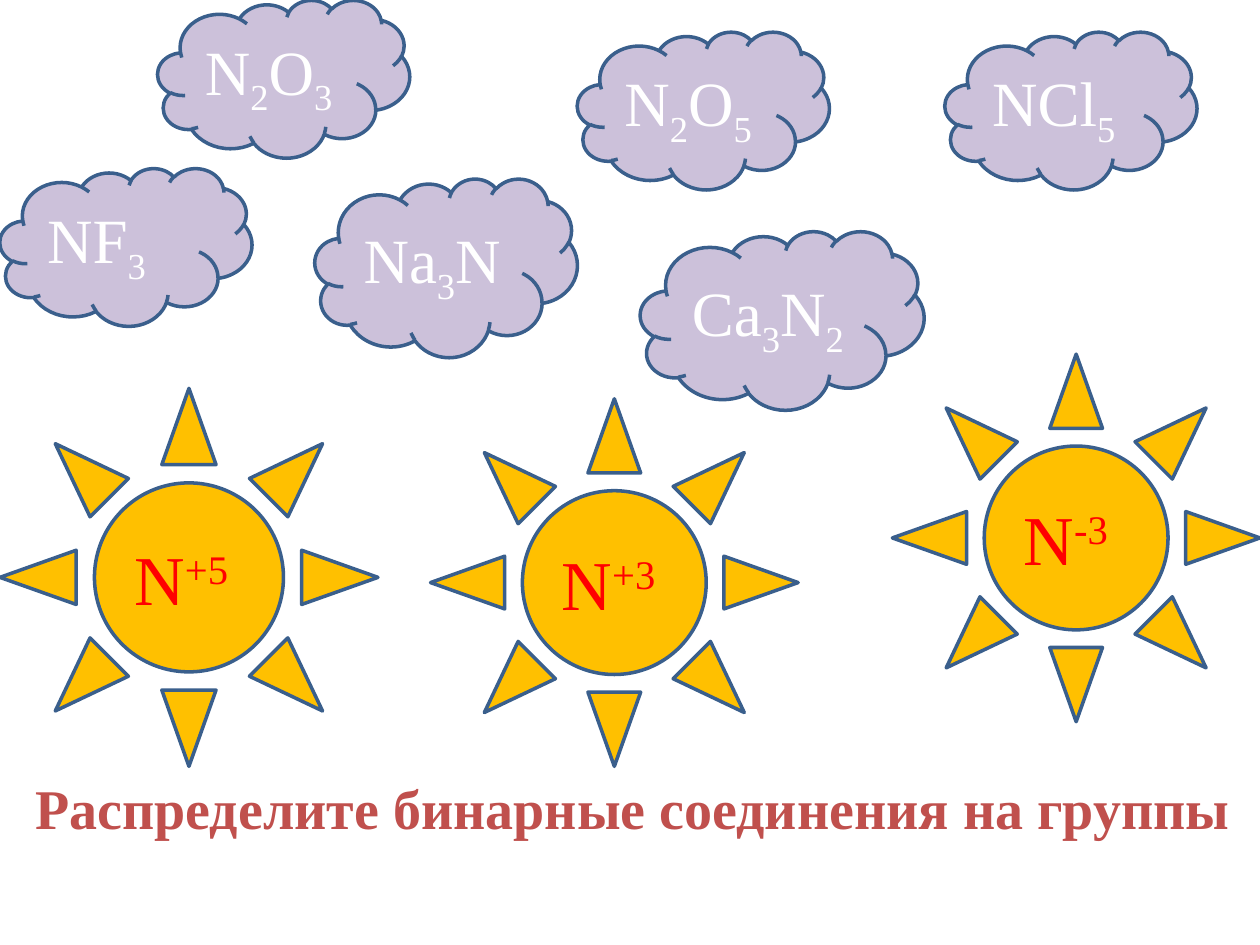
from pptx import Presentation
from pptx import util as u
from pptx.dml import color
from pptx.enum import shapes, text

FONT = "Times New Roman"
SUBSCRIPT, SUPERSCRIPT = -25000, 30000


def paint(target, hex_colour):
    target.rgb = color.RGBColor.from_string(hex_colour)


def add_formula(preset, box, parts, fill, ink, size, shift):
    """Draw a preset shape holding a formula; every second part is raised or lowered."""
    figure = slide.shapes.add_shape(preset, *[u.Cm(length) for length in box])
    figure.shadow.inherit = False
    figure.fill.solid()
    paint(figure.fill.fore_color, fill)
    paint(figure.line.color, "3A5F8C")
    figure.line.width = u.Pt(2)
    formula = figure.text_frame.paragraphs[0]
    formula.alignment = text.PP_ALIGN.LEFT
    formula.font.name = FONT
    formula.font.size = u.Pt(size)
    paint(formula.font.color, ink)
    for index, part in enumerate(parts):
        run = formula.add_run()
        run.text = part
        if index % 2:
            run.font._element.set("baseline", str(shift))


deck = Presentation()
deck.slide_width, deck.slide_height = u.Cm(25.4), u.Cm(19.05)
slide = deck.slides.add_slide(deck.slide_layouts[6])

# Suns: oxidation states of nitrogen (left, top, diameter, charge)
oxidation_states = [
    (8.68, 8.04, 7.41, "+3"),
    (0, 7.83, 7.62, "+5"),
    (17.99, 7.14, 7.41, "-3"),
]
for left, top, diameter, charge in oxidation_states:
    add_formula(shapes.MSO_SHAPE.SUN, (left, top, diameter, diameter),
                ["N", charge], "FFC000", "FF0000", 40, SUPERSCRIPT)

# Clouds: compounds to sort (left, top, width, height, formula parts)
compounds = [
    (6.35, 3.6, 5.29, 3.6, ["Na", "3", "N"]),
    (3.18, 0, 5.08, 3.18, ["N", "2", "O", "3"]),
    (19.05, 0.64, 5.08, 3.18, ["NCl", "5"]),
    (0, 3.39, 5.08, 3.18, ["NF", "3"]),
    (12.91, 4.66, 5.72, 3.6, ["Ca", "3", "N", "2"]),
    (11.64, 0.64, 5.08, 3.18, ["N", "2", "O", "5"]),
]
for *box, parts in compounds:
    add_formula(shapes.MSO_SHAPE.CLOUD, box, parts, "CCC1DA", "FFFFFF", 36, SUBSCRIPT)

# Task
task_box = slide.shapes.add_textbox(u.Cm(0.41), u.Cm(15.47), u.Cm(24.99), u.Cm(1.62))
task_box.text_frame.word_wrap = True
task_box.text_frame.auto_size = text.MSO_AUTO_SIZE.SHAPE_TO_FIT_TEXT
task = task_box.text_frame.paragraphs[0]
task.text = "Распределите бинарные соединения на группы "
task.alignment = text.PP_ALIGN.CENTER
task.font.name = FONT
task.font.size = u.Pt(32)
task.font.bold = True
paint(task.font.color, "C0504D")

deck.save("out.pptx")
